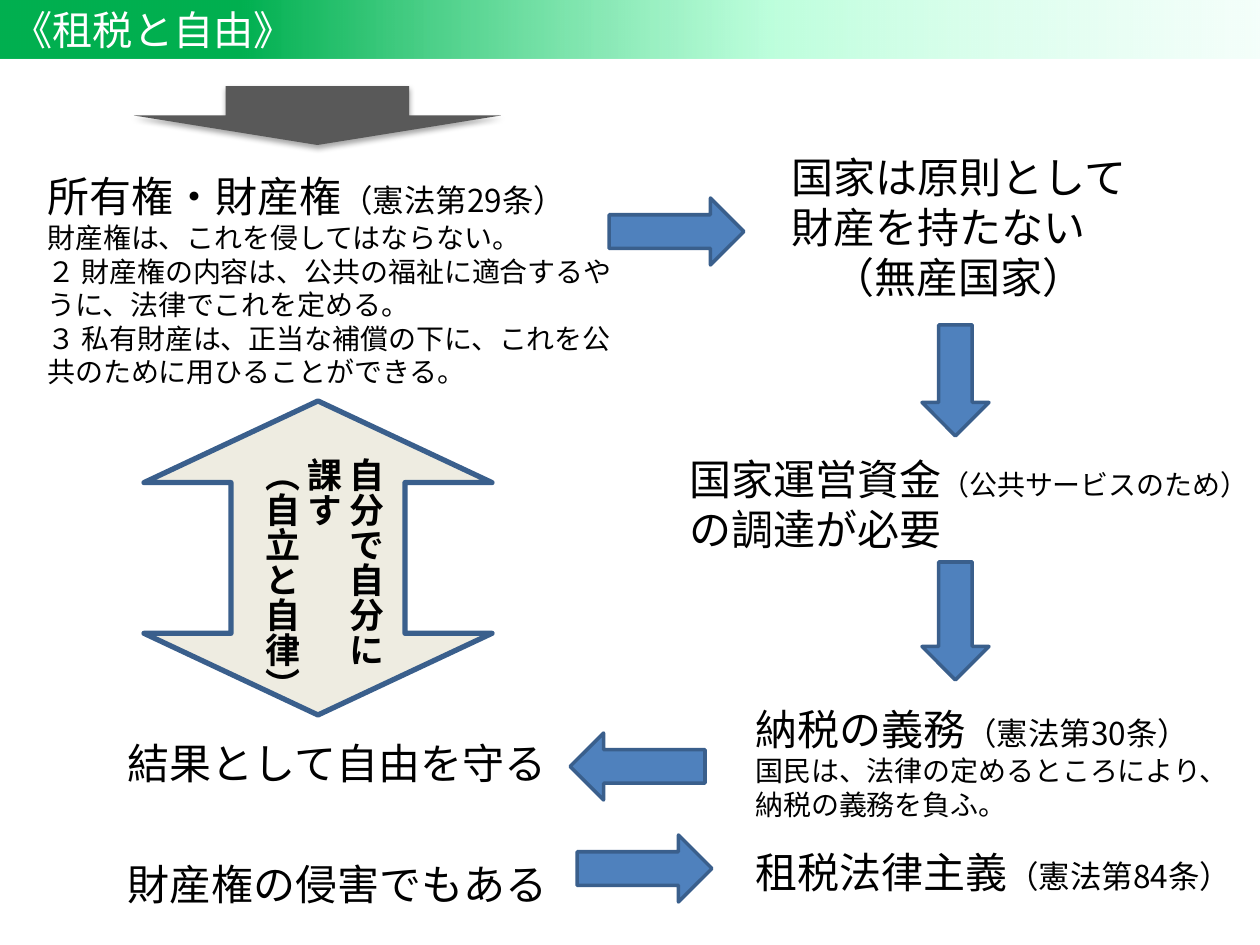
from lxml.etree import SubElement
from pptx import Presentation
from pptx.dml.color import RGBColor
from pptx.enum.shapes import MSO_SHAPE as Shape
from pptx.enum.text import MSO_ANCHOR, MSO_AUTO_SIZE, PP_ALIGN
from pptx.oxml import parse_xml
from pptx.oxml.ns import nsdecls, qn
from pptx.util import Pt

PX = 914400 / 126
FONT = "Noto Sans CJK JP"
BLUE, NAVY = "4F81BD", "3A5F8C"


def px(*values):
    return [round(v * PX) for v in values]


def rgb(code):
    return RGBColor.from_string(code)


def write(tf, paragraphs, color="000000", bold=False):
    for i, runs in enumerate(paragraphs):
        p = tf.paragraphs[0] if i == 0 else tf.add_paragraph()
        p.alignment = PP_ALIGN.LEFT
        p.font.name = FONT
        p.font.bold = bold
        p.font.color.rgb = rgb(color)
        ea = SubElement(p._p.pPr.find(qn("a:defRPr")), qn("a:ea"))
        ea.set("typeface", FONT)
        for text, size in runs:
            r = p.add_run()
            r.text = text
            r.font.size = Pt(size)


def add_text(shapes, box, paragraphs, wrap=False, bold=False):
    tf = shapes.add_textbox(*px(*box)).text_frame
    tf.word_wrap = wrap
    tf.auto_size = MSO_AUTO_SIZE.SHAPE_TO_FIT_TEXT
    write(tf, paragraphs, bold=bold)
    return tf


def add_shape(shapes, kind, box, fill, line=None, width=2):
    sp = shapes.add_shape(kind, *px(*box))
    sp.shadow.inherit = False
    sp.fill.solid()
    sp.fill.fore_color.rgb = rgb(fill)
    if line:
        sp.line.color.rgb = rgb(line)
        sp.line.width = Pt(width)
    else:
        sp.line.fill.background()
    return sp


def add_flow_arrow(shapes, x, y, length, rotation=0):
    sp = add_shape(shapes, Shape.DOWN_ARROW, (x, y, 67, length), BLUE, NAVY)
    sp.rotation = rotation


def add_start_arrow(shapes):
    sp = add_shape(shapes, Shape.DOWN_ARROW, (134, 86, 367, 59), "595959")
    effects = sp._element.spPr.find(qn("a:effectLst"))
    effects.append(parse_xml(
        f'<a:outerShdw {nsdecls("a")} blurRad="{Pt(3.1)}" dist="{Pt(1.8)}" '
        'dir="5400000" rotWithShape="0"><a:srgbClr val="000000">'
        '<a:alpha val="35000"/></a:srgbClr></a:outerShdw>'))


def add_autonomy_arrow(shapes):
    group = shapes.add_group_shape().shapes
    sp = add_shape(group, Shape.UP_DOWN_ARROW, (144, 401, 348, 314), "EEECE1", NAVY, 3)
    geometry = sp._element.spPr.find(qn("a:prstGeom"))
    geometry.replace(geometry.find(qn("a:avLst")), parse_xml(
        f'<a:avLst {nsdecls("a")}><a:gd name="adj1" fmla="val 50000"/>'
        '<a:gd name="adj2" fmla="val 26000"/></a:avLst>'))
    lines = ["自分で自分に", "課す", "（自立と自律）"]
    tf = add_text(group, (241, 445, 152, 286), [[(t, 20)] for t in lines],
                  wrap=True, bold=True)
    tf._txBody.bodyPr.set("vert", "eaVert")


def add_title(shapes):
    sp = add_shape(shapes, Shape.RECTANGLE, (0, 0, 1260, 59), "00B050")
    stops = [(19, "00B050", 100), (61, "ABFFD3", 78), (100, "DBFFF0", 28)]
    gs = "".join(
        f'<a:gs pos="{pos}000"><a:srgbClr val="{color}">'
        f'<a:alpha val="{alpha}000"/></a:srgbClr></a:gs>'
        for pos, color, alpha in stops)
    spPr = sp._element.spPr
    spPr.replace(spPr.find(qn("a:solidFill")), parse_xml(
        f'<a:gradFill {nsdecls("a")} rotWithShape="1"><a:gsLst>{gs}</a:gsLst>'
        '<a:lin ang="0" scaled="0"/></a:gradFill>'))
    tf = sp.text_frame
    tf.vertical_anchor = MSO_ANCHOR.MIDDLE
    write(tf, [[("《租税と自由》", 23)]], "FFFFFF")


def main():
    prs = Presentation()
    prs.slide_width, prs.slide_height = px(1260, 945)
    shapes = prs.slides.add_slide(prs.slide_layouts[6]).shapes

    add_text(shapes, (35, 164, 602, 233), [
        [("所有権・財産権", 24), ("（憲法第29条）", 18)],
        [("財産権は、これを侵してはならない。", 16)],
        [("２ 財産権の内容は、公共の福祉に適合するやうに、法律でこれを定める。", 16)],
        [("３ 私有財産は、正当な補償の下に、これを公共のために用ひることができる。", 16)],
    ], wrap=True)
    add_text(shapes, (743, 697, 517, 131), [
        [("納税の義務", 24), ("（憲法第30条）", 18)],
        [("国民は、法律の定めるところにより、納税の義務を負ふ。", 16)],
    ], wrap=True)
    add_text(shapes, (677, 447, 591, 115), [
        [("国家運営資金", 24), ("（公共サービスのため）", 16)],
        [("の調達が必要", 24)],
    ])
    stateless = add_text(shapes, (779, 145, 364, 165), [
        [("国家は原則として", 24)],
        [("財産を持たない", 24)],
        [("（無産国家）", 24)],
    ])
    stateless.paragraphs[2].alignment = PP_ALIGN.CENTER
    add_text(shapes, (743, 840, 518, 63),
             [[("租税法律主義", 24), ("（憲法第84条）", 18)]])
    for y, text in [(731, "結果として自由を守る"), (852, "財産権の侵害でもある")]:
        add_text(shapes, (115, y, 450, 63), [[(text, 24)]])

    for arrow in [(643, 164, 135, 270), (922, 325, 111), (922, 562, 118),
                  (604, 699, 135, 90), (611, 801, 135, 270)]:
        add_flow_arrow(shapes, *arrow)
    add_start_arrow(shapes)
    add_autonomy_arrow(shapes)
    add_title(shapes)
    prs.save("out.pptx")


if __name__ == "__main__":
    main()
